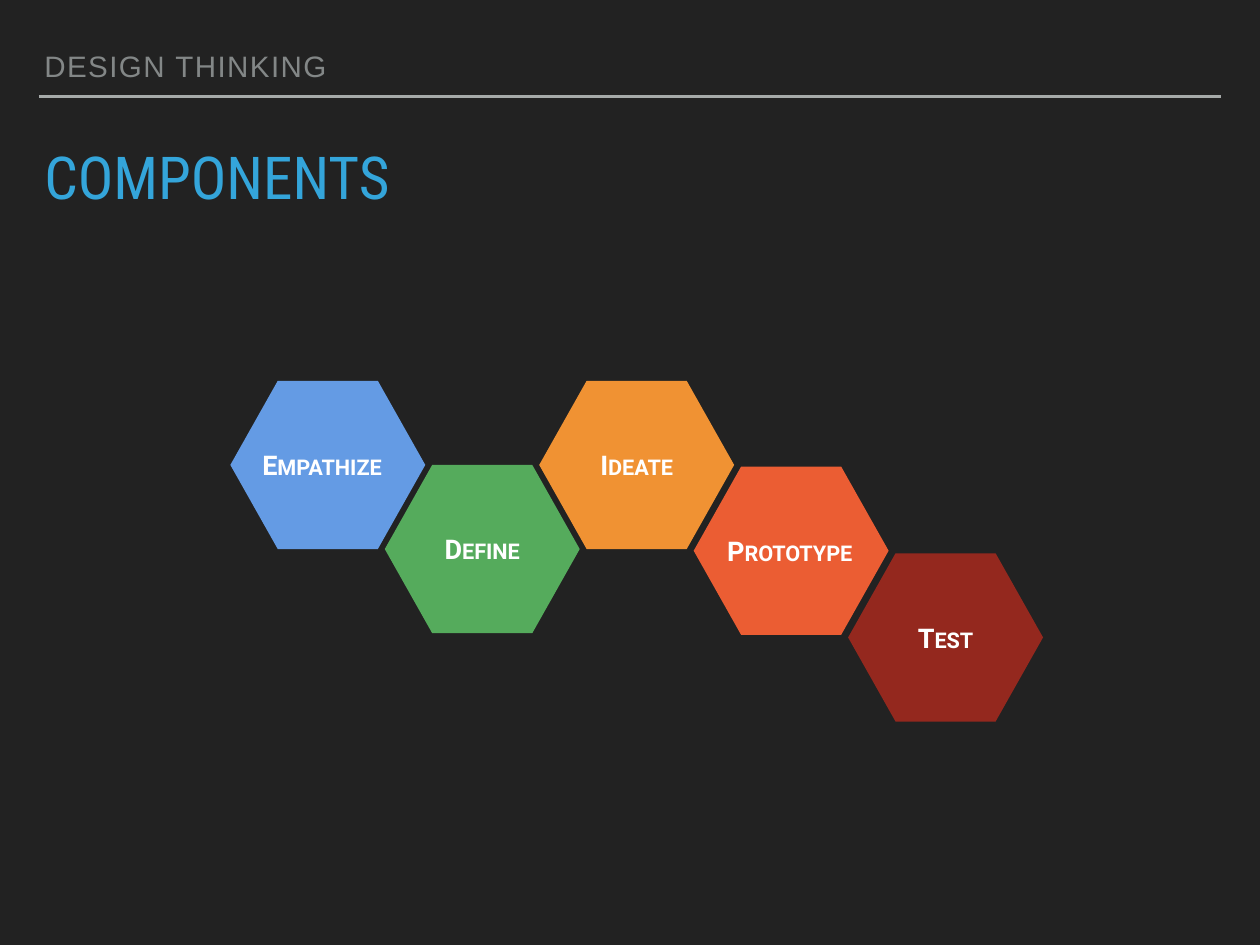
"""Build the Design Thinking components slide with its chain of five hexagons."""
from lxml import etree
from pptx import Presentation
from pptx.dml.color import RGBColor
from pptx.enum.shapes import MSO_CONNECTOR, MSO_SHAPE
from pptx.enum.text import MSO_ANCHOR, MSO_AUTO_SIZE, PP_ALIGN
from pptx.oxml.ns import qn
from pptx.util import Inches, Pt

HEXAGON = MSO_SHAPE.HEXAGON
STRAIGHT = MSO_CONNECTOR.STRAIGHT
TOP, MIDDLE, BOTTOM = MSO_ANCHOR.TOP, MSO_ANCHOR.MIDDLE, MSO_ANCHOR.BOTTOM
LEFT, CENTER = PP_ALIGN.LEFT, PP_ALIGN.CENTER
NO_AUTOFIT = MSO_AUTO_SIZE.NONE

THEME = {
    "background": "222222",
    "rule": "A6AAA9",
    "header": {"name": "Arial", "size": Pt(24), "color": "838787"},
    "title": {"name": "Roboto Condensed", "size": Pt(48.1), "color": "34A5DA"},
    "label": {"name": "Roboto", "size": Pt(22), "color": "FFFFFF", "bold": True},
}
MARGIN = Inches(0.44)
PADDING = Inches(0.06)

GRID_LEFT, GRID_TOP = Inches(2.6), Inches(4.3)
COLUMN_STEP, ROW_STEP = Inches(1.743), Inches(0.95)
HEXAGON_WIDTH, HEXAGON_HEIGHT = Inches(2.2), Inches(1.9)
HEXAGON_CORNER = 0.2816
COMPONENTS = [
    ("Empathize", 0, "649BE4", Inches(0.13)),
    ("Define", 1, "55AB5C", 0),
    ("Ideate", 0, "F09233", 0),
    ("Prototype", 1.02, "EB5D33", Inches(0.03)),
    ("Test", 2.05, "94281E", 0),
]


def write_text(shape, text, style, frame_format, paragraph_format, run_attributes):
    frame = shape.text_frame
    frame.text = text
    paragraph = frame.paragraphs[0]
    run = paragraph.runs[0]
    font_format = {key: value for key, value in THEME[style].items() if key != "color"}
    for target, values in (
        (frame, frame_format),
        (paragraph, paragraph_format),
        (run.font, font_format),
    ):
        for name, value in values.items():
            setattr(target, name, value)
    run.font.color.rgb = RGBColor.from_string(THEME[style]["color"])
    for name, value in run_attributes.items():
        run.font._element.set(name, value)


presentation = Presentation()
presentation.slide_width, presentation.slide_height = Inches(14.22), Inches(10.67)
slide_width = presentation.slide_width
slide = presentation.slides.add_slide(presentation.slide_layouts[5])
slide.background.fill.solid()
slide.background.fill.fore_color.rgb = RGBColor.from_string(THEME["background"])

rule_y = Inches(1.09)
rule = slide.shapes.add_connector(STRAIGHT, MARGIN, rule_y, slide_width - MARGIN, rule_y)
rule.line.color.rgb = RGBColor.from_string(THEME["rule"])
rule.line.width = Pt(2)
etree.SubElement(rule._element.spPr, qn("a:effectLst"))

padded = {
    "margin_left": PADDING,
    "margin_right": PADDING,
    "margin_top": PADDING,
    "margin_bottom": PADDING,
    "word_wrap": True,
    "auto_size": NO_AUTOFIT,
}
heading = {"alignment": LEFT, "line_spacing": 0.8}

header = slide.shapes.add_textbox(MARGIN, Inches(0.5), Inches(12.22), Inches(0.5))
write_text(header, "DESIGN THINKING", "header",
           {**padded, "vertical_anchor": BOTTOM}, heading, {"spc": "120"})

title = slide.shapes.title
title_box = {"left": MARGIN, "top": Inches(1.68),
             "width": slide_width - 2 * MARGIN, "height": Inches(0.79)}
for name, value in title_box.items():
    setattr(title, name, value)
write_text(title, "COMPONENTS", "title",
           {**padded, "vertical_anchor": TOP}, {**heading, "space_before": Pt(24)}, {})

for column, (label, row, color, right_inset) in enumerate(COMPONENTS):
    hexagon = slide.shapes.add_shape(
        HEXAGON,
        int(GRID_LEFT + column * COLUMN_STEP),
        int(GRID_TOP + row * ROW_STEP),
        HEXAGON_WIDTH,
        HEXAGON_HEIGHT,
    )
    hexagon.adjustments[0] = HEXAGON_CORNER
    hexagon.shadow.inherit = False
    hexagon.fill.solid()
    hexagon.fill.fore_color.rgb = RGBColor.from_string(color)
    hexagon.line.fill.background()
    label_frame = {"margin_left": 0, "margin_right": right_inset, "margin_top": 0,
                   "margin_bottom": 0, "word_wrap": False, "vertical_anchor": MIDDLE}
    write_text(hexagon, label, "label", label_frame, {"alignment": CENTER}, {"cap": "small"})

presentation.save("out.pptx")
